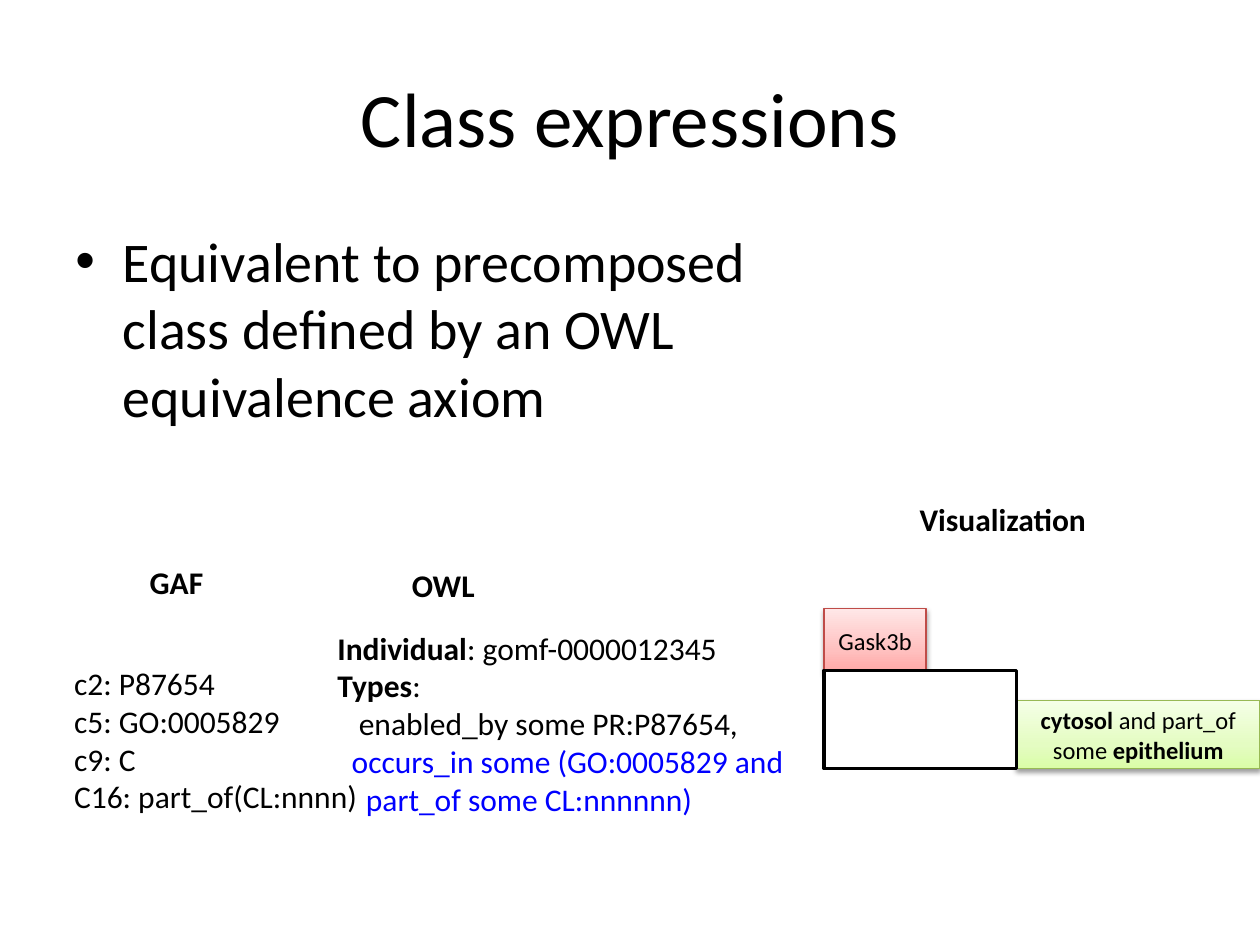
from dataclasses import dataclass

from lxml.etree import SubElement
from pptx import Presentation
from pptx.dml.color import RGBColor
from pptx.enum.shapes import MSO_SHAPE as Preset
from pptx.enum.text import MSO_ANCHOR as Anchor, MSO_AUTO_SIZE as AutoSize, PP_ALIGN as Align
from pptx.oxml.ns import qn
from pptx.util import Inches, Pt

COLORS = {
    "text": "000000",
    "highlight": "0000FF",
    "paper": "FFFFFF",
    "green_line": "98B955",
    "red_line": "BF4C48",
}
GREENS = ("DAFDA7", "E4FCC2", "F5FFE7")
REDS = ("FFA6A5", "FFC0BF", "FFE7E7")
GRADIENT_STOPS = (0, 35, 100)
FONT = "Calibri"
COLUMNS, ROWS = 100, 75
SPACE_WIDTH = 0.0565


@dataclass(frozen=True)
class Box:
    left: float
    top: float
    width: float
    height: float


@dataclass(frozen=True)
class Run:
    text: str
    bold: bool = False
    color: str = "text"


@dataclass(frozen=True)
class Line:
    runs: tuple[Run, ...]
    indent: int = 0


@dataclass(frozen=True)
class Label:
    box: Box
    lines: tuple[Line, ...]
    size: int = 18
    align: Align = Align.LEFT
    anchor: Anchor = Anchor.TOP
    wrap: bool = False


@dataclass(frozen=True)
class Block:
    box: Box
    line: str
    weight: float
    gradient: tuple[str, ...] = ()
    runs: tuple[Run, ...] = ()


def plain(text: str, bold: bool = False) -> tuple[Line, ...]:
    return (Line((Run(text, bold),)),)


TITLE = Label(Box(5, 3, 90, 12.5), plain("Class expressions"), 44, Align.CENTER, Anchor.MIDDLE, True)
BODY = Label(
    Box(5, 17.5, 59.3, 27.4),
    plain("Equivalent to precomposed class defined by an OWL equivalence axiom"),
    32,
    wrap=True,
)
LABELS = (
    Label(
        Box(25.8, 49.4, 37.8, 16.2),
        (
            Line((Run("Individual", True), Run(": gomf-0000012345"))),
            Line((Run("Types", True), Run(":"))),
            Line((Run("enabled_by some PR:P87654,"),), 3),
            Line((Run("occurs_in some (GO:0005829 and", color="highlight"),), 2),
            Line((Run("part_of some CL:nnnnnn)", color="highlight"),), 4),
        ),
    ),
    Label(Box(31.7, 44.4, 7.1, 4), plain("OWL", True)),
    Label(Box(10.9, 44.2, 6.3, 4), plain("GAF", True)),
    Label(Box(72, 39.2, 15.4, 4), plain("Visualization", True)),
    Label(
        Box(4.9, 52.2, 24.7, 13.1),
        plain("c2: P87654") + plain("c5: GO:0005829") + plain("c9: C") + plain("C16: part_of(CL:nnnn)"),
    ),
)
BLOCKS = (
    Block(
        Box(80.7, 55.6, 19.3, 5.4),
        "green_line",
        0.75,
        GREENS,
        (Run("cytosol ", True), Run("and part_of some "), Run("epithelium", True)),
    ),
    Block(Box(65.4, 48.3, 8.1, 5.1), "red_line", 0.75, REDS, (Run("Gask3b"),)),
    Block(Box(65.4, 53.2, 15.3, 7.8), "text", 2),
)


def place(presentation, box: Box) -> tuple[int, ...]:
    column = presentation.slide_width / COLUMNS
    row = presentation.slide_height / ROWS
    return tuple(round(v) for v in (box.left * column, box.top * row, box.width * column, box.height * row))


def write_runs(paragraph, runs: tuple[Run, ...], size: int) -> None:
    for item in runs:
        run = paragraph.add_run()
        run.text = item.text
        run.font.name = FONT
        run.font.size = Pt(size)
        run.font.bold = item.bold
        run.font.color.rgb = RGBColor.from_string(COLORS[item.color])


def add_label(presentation, slide, label: Label):
    shape = slide.shapes.add_textbox(*place(presentation, label.box))
    frame = shape.text_frame
    frame.word_wrap = label.wrap
    frame.auto_size = AutoSize.NONE if label.wrap else AutoSize.SHAPE_TO_FIT_TEXT
    frame.vertical_anchor = label.anchor
    for index, line in enumerate(label.lines):
        paragraph = frame.add_paragraph() if index else frame.paragraphs[0]
        paragraph.alignment = label.align
        write_runs(paragraph, line.runs, label.size)
        if line.indent:
            paragraph._p.get_or_add_pPr().set("marL", str(Inches(line.indent * SPACE_WIDTH)))
    return shape


def add_bullet(paragraph) -> None:
    properties = paragraph._p.get_or_add_pPr()
    properties.set("marL", str(Inches(0.375)))
    properties.set("indent", str(Inches(-0.375)))
    SubElement(properties, qn("a:buFont"), typeface="Arial")
    SubElement(properties, qn("a:buChar"), char="•")


def fill_gradient(shape, colors: tuple[str, ...]) -> None:
    shape.fill.gradient()
    shape.fill.gradient_angle = 90
    stops = shape._element.spPr.find(qn("a:gradFill")).find(qn("a:gsLst"))
    for stop in list(stops):
        stops.remove(stop)
    for position, color in zip(GRADIENT_STOPS, colors):
        stop = SubElement(stops, qn("a:gs"), pos=str(position * 1000))
        SubElement(stop, qn("a:srgbClr"), val=color)


def cast_shadow(shape) -> None:
    effects = shape._element.spPr.find(qn("a:effectLst"))
    shadow = SubElement(
        effects, qn("a:outerShdw"), blurRad=str(Pt(3.1)), dist=str(Pt(1.6)), dir="5400000", rotWithShape="0"
    )
    color = SubElement(shadow, qn("a:srgbClr"), val=COLORS["text"])
    SubElement(color, qn("a:alpha"), val="38000")


def add_block(presentation, slide, block: Block) -> None:
    shape = slide.shapes.add_shape(Preset.RECTANGLE, *place(presentation, block.box))
    shape.line.color.rgb = RGBColor.from_string(COLORS[block.line])
    shape.line.width = Pt(block.weight)
    shape.shadow.inherit = False
    if block.gradient:
        fill_gradient(shape, block.gradient)
        cast_shadow(shape)
    else:
        shape.fill.solid()
        shape.fill.fore_color.rgb = RGBColor.from_string(COLORS["paper"])
    shape.text_frame.vertical_anchor = Anchor.MIDDLE
    paragraph = shape.text_frame.paragraphs[0]
    paragraph.alignment = Align.CENTER
    write_runs(paragraph, block.runs, 14)


def main() -> None:
    presentation = Presentation()
    presentation.slide_width = Inches(10)
    presentation.slide_height = Inches(7.5)
    slide = presentation.slides.add_slide(presentation.slide_layouts[6])
    add_label(presentation, slide, TITLE)
    body = add_label(presentation, slide, BODY)
    add_bullet(body.text_frame.paragraphs[0])
    for label in LABELS:
        add_label(presentation, slide, label)
    for block in BLOCKS:
        add_block(presentation, slide, block)
    presentation.save("out.pptx")


if __name__ == "__main__":
    main()
